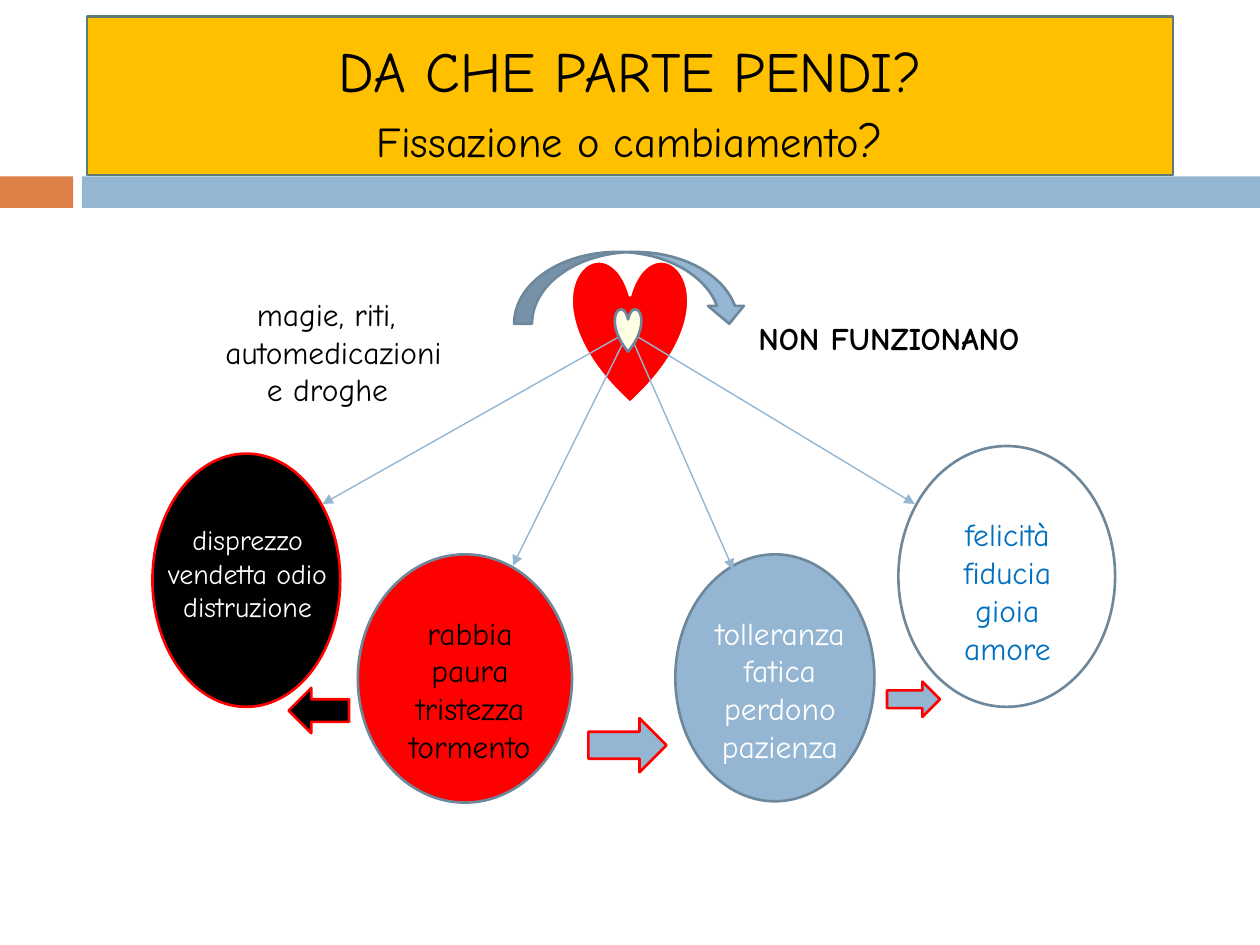
from dataclasses import dataclass
from typing import Any

from lxml.etree import SubElement
from pptx import Presentation
from pptx.dml.color import RGBColor
from pptx.enum.shapes import MSO_CONNECTOR, MSO_SHAPE
from pptx.enum.text import MSO_ANCHOR, PP_ALIGN
from pptx.oxml.ns import qn
from pptx.util import Inches, Pt

BLACK = RGBColor(0x00, 0x00, 0x00)
WHITE = RGBColor(0xFF, 0xFF, 0xFF)
RED = RGBColor(0xFF, 0x00, 0x00)
GOLD = RGBColor(0xFF, 0xC0, 0x00)
GREEN = RGBColor(0x5B, 0x7C, 0x74)
ORANGE = RGBColor(0xDD, 0x80, 0x47)
SKY = RGBColor(0x94, 0xB6, 0xD2)
SLATE = RGBColor(0x6D, 0x87, 0x9B)
CREAM = RGBColor(0xFF, 0xFF, 0xE3)
BLUE = RGBColor(0x00, 0x70, 0xC0)

COLS, ROWS = 100, 75


@dataclass
class Board:
    """Draws styled elements on one slide, placed on a grid of COLS by ROWS."""

    prs: Any
    s: Any
    font: str = "Comic Neue"
    outline: float = 1.5
    arrow: float = 0.79

    def place(self, *cells):
        sizes = (self.prs.slide_width / COLS, self.prs.slide_height / ROWS)
        return [round(c * sizes[i % 2]) for i, c in enumerate(cells)]

    def shape(self, kind, at, fill, line=None):
        sp = self.s.shapes.add_shape(kind, *self.place(*at))
        sp.shadow.inherit = False
        sp.fill.solid()
        sp.fill.fore_color.rgb = fill
        if line is None:
            sp.line.fill.background()
        else:
            sp.line.color.rgb = line
            sp.line.width = Pt(self.outline)
        return sp

    def fill_text(self, sp, paragraphs, anchor=MSO_ANCHOR.TOP):
        tf = sp.text_frame
        tf.word_wrap = True
        tf.vertical_anchor = anchor
        for i, (runs, layout, indent) in enumerate(paragraphs):
            p = tf.paragraphs[0] if i == 0 else tf.add_paragraph()
            for name, value in layout.items():
                setattr(p, name, value)
            if indent:
                p._p.get_or_add_pPr().set("indent", str(self.place(indent)[0]))
            for text, size, color, bold in runs:
                r = p.add_run()
                r.text = text
                r.font.color.rgb = color
                style = {"name": self.font, "size": Pt(size), "bold": bold}
                for name, value in style.items():
                    setattr(r.font, name, value)

    def text(self, at, lines, size=18, color=BLACK, bold=False,
             align=PP_ALIGN.LEFT):
        tb = self.s.shapes.add_textbox(*self.place(*at))
        self.fill_text(tb, [([(text, size, color, bold)], {"alignment": align}, indent)
                            for text, indent in lines])

    def ray(self, start, end):
        cx = self.s.shapes.add_connector(
            MSO_CONNECTOR.STRAIGHT, *self.place(*start, *end))
        cx.line.color.rgb = SKY
        cx.line.width = Pt(self.arrow)
        SubElement(cx.line._get_or_add_ln(), qn("a:tailEnd"), type="triangle")
        SubElement(cx._element.spPr, qn("a:effectLst"))


def main():
    prs = Presentation()
    prs.slide_width, prs.slide_height = Inches(10), Inches(7.5)
    b = Board(prs, prs.slides.add_slide(prs.slide_layouts[6]))

    b.shape(MSO_SHAPE.RECTANGLE, (0, 14, 5.8, 2.5), ORANGE)
    b.shape(MSO_SHAPE.RECTANGLE, (6.5, 14, 93.5, 2.5), SKY)
    title = b.shape(MSO_SHAPE.RECTANGLE, (6.9, 1.3, 86.2, 12.6), GOLD, GREEN)
    heading = [("DA CHE PARTE PENDI?", 32.4, BLACK, False)]
    question = [("Fissazione o cambiamento", 24.3, BLACK, False),
                ("?", 27.9, BLACK, False)]
    b.fill_text(title, [
        (runs, {"alignment": PP_ALIGN.CENTER, "line_spacing": Pt(height)}, 0)
        for runs, height in ((heading, 45.5), (question, 36))
    ], MSO_ANCHOR.MIDDLE)

    b.shape(MSO_SHAPE.HEART, (45.4, 20.6, 9.2, 11.4), RED, WHITE)
    moods = [
        ((12.1, 36, 14.9, 20.1), BLACK, RED, (12.2, 41, 14.9, 11.8),
         "disprezzo vendetta odio distruzione", 16, WHITE),
        ((28.4, 44, 17, 19.7), RED, SLATE, (30.4, 48.2, 13.8, 13.1),
         "rabbia paura tristezza tormento", 18, BLACK),
        ((53.6, 44, 15.8, 19.6), SKY, SLATE, (55.3, 48.2, 13.2, 13.1),
         "tolleranza fatica perdono pazienza", 18, WHITE),
        ((71.3, 35.4, 17.2, 20.7), WHITE, SLATE, (73.4, 40.4, 13.1, 13.1),
         "felicità fiducia gioia amore", 18, BLUE),
    ]
    for at, fill, line, *_ in moods:
        b.shape(MSO_SHAPE.OVAL, at, fill, line)
    for end in ((25.6, 40), (40.7, 44.9), (58.2, 45.2), (72.6, 40)):
        b.ray((49.9, 26.3), end)
    b.shape(MSO_SHAPE.HEART, (48.8, 24.5, 2.1, 3.4), CREAM, SLATE)
    for *_, at, words, size, color in moods:
        b.text(at, [(words, 0)], size, color, align=PP_ALIGN.CENTER)

    b.shape(MSO_SHAPE.CURVED_DOWN_ARROW, (40.8, 20, 18.5, 5.7), SKY, SLATE)
    b.text((16.9, 22.9, 28.5, 10.1),
           [("magie, riti, automedicazioni", 2.5), ("e droghe", 3.3)])
    b.text((59.2, 24.8, 24.4, 7.1), [("NON FUNZIONANO", 0)], bold=True)

    for kind, at, fill in (
        (MSO_SHAPE.RIGHT_ARROW, (46.7, 57, 6.2, 4.3), SKY),
        (MSO_SHAPE.RIGHT_ARROW, (70.4, 54.1, 4.2, 2.8), SKY),
        (MSO_SHAPE.LEFT_ARROW, (22.9, 54.6, 4.8, 3.6), BLACK),
    ):
        b.shape(kind, at, fill, RED)

    prs.save("out.pptx")


if __name__ == "__main__":
    main()
